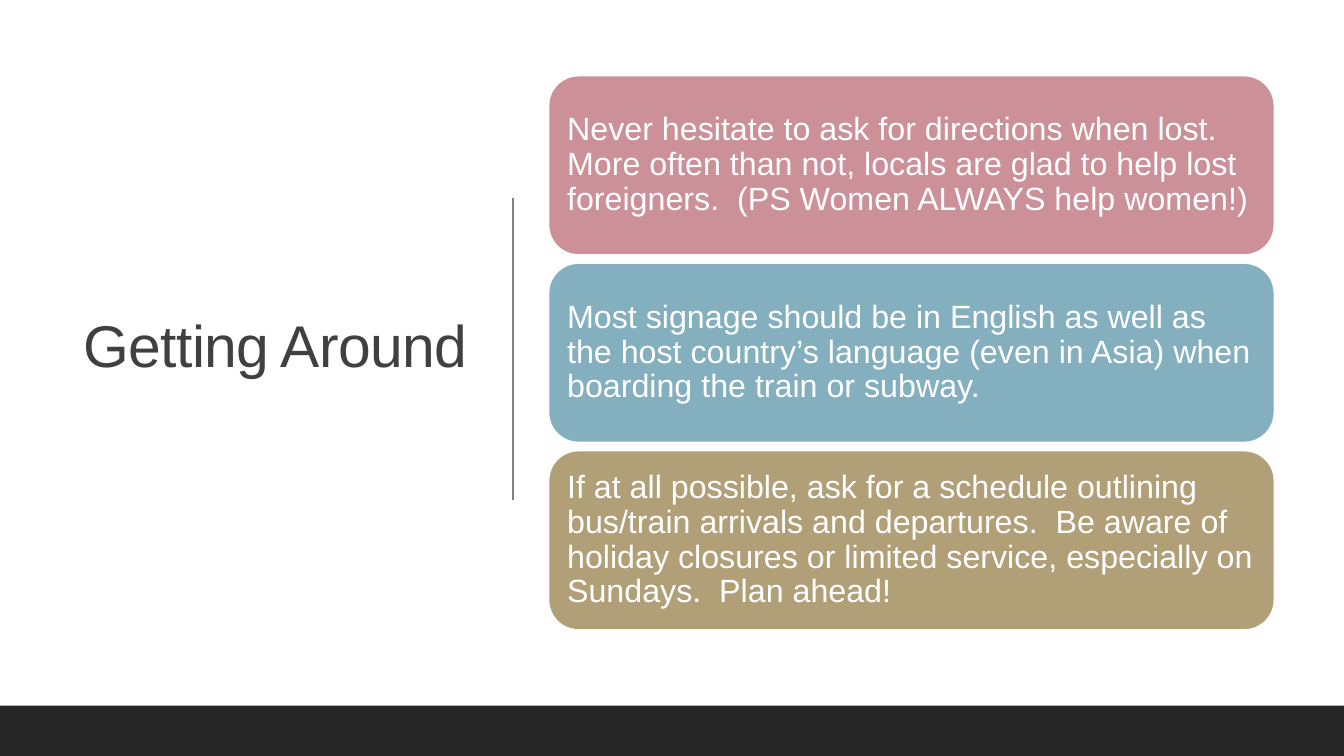
from pptx import Presentation
from pptx.dml.color import RGBColor
from pptx.enum.shapes import MSO_CONNECTOR, MSO_SHAPE
from pptx.enum.text import MSO_ANCHOR, PP_ALIGN
from pptx.oxml.ns import qn
from lxml import etree

RECT, ROUND = MSO_SHAPE.RECTANGLE, MSO_SHAPE.ROUNDED_RECTANGLE
STRAIGHT = MSO_CONNECTOR.STRAIGHT
LEFT, RIGHT = PP_ALIGN.LEFT, PP_ALIGN.RIGHT
MIDDLE = MSO_ANCHOR.MIDDLE

# Content
TITLE = "Getting Around"
TIPS = [
    ("rose", "Never hesitate to ask for directions when lost.  More often than not, "
             "locals are glad to help lost foreigners.  (PS Women ALWAYS help women!)"),
    ("blue", "Most signage should be in English as well as the host country’s language "
             "(even in Asia) when boarding the train or subway."),
    ("sand", "If at all possible, ask for a schedule outlining bus/train arrivals and "
             "departures.  Be aware of holiday closures or limited service, especially "
             "on Sundays.  Plan ahead!"),
]

# Theme
THEME = {
    "font": "Arial",
    "sizes": {"title": 42, "tip": 23},
    "colors": {"ink": "404040", "white": "FFFFFF", "rule": "808080", "band": "262626",
               "rose": "CC9099", "blue": "83AFBF", "sand": "B19F77"},
}

# Layout in px, 100 to the inch
PX = 9144
POINT = 12700
WIDE, HIGH = 1333, 750
HEAD = (70, 69, 403, 553)
RULE = (509, 196, 509, 496)
BAND = 50
CARD = {"x": 544, "y": 75, "w": 720, "h": 178, "gap": 8}
PAD = 10


def emu(*vals):
    return [val * PX for val in vals]


def color(name):
    return RGBColor.from_string(THEME["colors"][name])


def assign(item, fmt):
    for key, val in fmt.items():
        setattr(item, key, val)


def write(shape, text, size, ink, align):
    frame = shape.text_frame
    assign(frame, {"word_wrap": True, "vertical_anchor": MIDDLE})
    para = frame.paragraphs[0]
    assign(para, {"alignment": align, "line_spacing": 0.9})
    run = para.add_run()
    run.text = text
    assign(run.font, {"name": THEME["font"], "size": THEME["sizes"][size] * POINT})
    run.font.color.rgb = color(ink)
    return run


def block(slide, kind, box, fill):
    shape = slide.shapes.add_shape(kind, *emu(*box))
    shape.shadow.inherit = False
    shape.fill.solid()
    shape.fill.fore_color.rgb = color(fill)
    shape.line.fill.background()
    return shape


def main():
    deck = Presentation()
    assign(deck, {"slide_width": WIDE * PX, "slide_height": HIGH * PX})
    slide = deck.slides.add_slide(deck.slide_layouts[6])

    # Title with slightly tight letters
    head = slide.shapes.add_textbox(*emu(*HEAD))
    run = write(head, TITLE, "title", "ink", RIGHT)
    run.font._element.set("spc", "-50")

    # Rule beside the title
    rule = slide.shapes.add_connector(STRAIGHT, *emu(*RULE))
    rule.line.width = POINT
    rule.line.color.rgb = color("rule")
    etree.SubElement(rule._element.spPr, qn("a:effectLst"))

    # Bottom band
    block(slide, RECT, (0, HIGH - BAND, WIDE, BAND), "band")

    # Tip cards
    pads = {"margin_" + side: PAD * PX for side in ("left", "right", "top", "bottom")}
    for i, (fill, text) in enumerate(TIPS):
        top = CARD["y"] + i * (CARD["h"] + CARD["gap"])
        card = block(slide, ROUND, (CARD["x"], top, CARD["w"], CARD["h"]), fill)
        card.line.color.rgb = color("white")
        card.line.width = int(1.25 * POINT)
        assign(card.text_frame, pads)
        write(card, text, "tip", "white", LEFT)

    deck.save("out.pptx")


if __name__ == "__main__":
    main()
